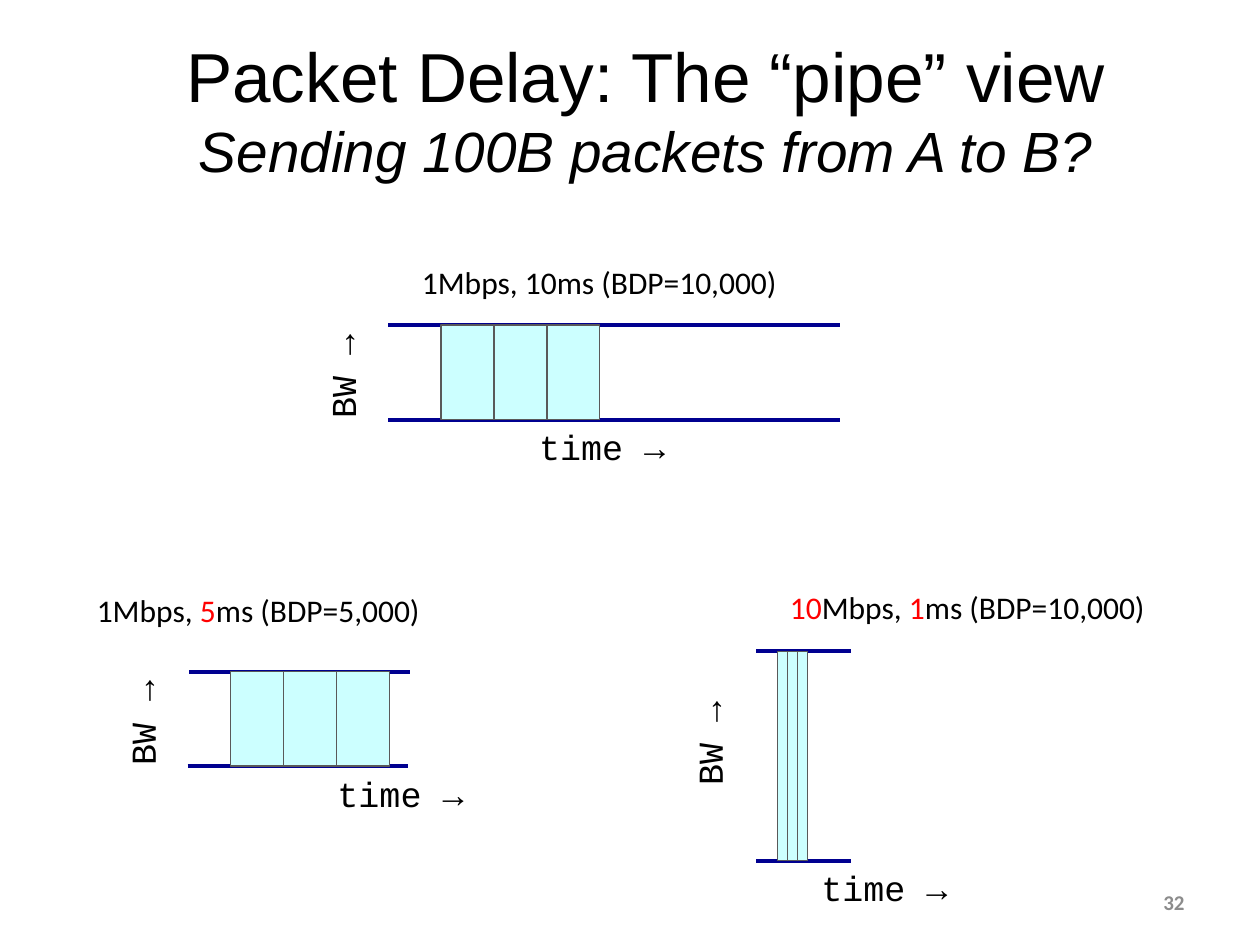
from dataclasses import dataclass

import pptx
import pptx.dml.color
import pptx.enum.shapes
import pptx.enum.text
import pptx.util
from pptx.oxml.xmlchemy import OxmlElement
from pptx.util import Inches

ALIGN = pptx.enum.text.PP_ALIGN
ANCHOR = pptx.enum.text.MSO_ANCHOR


@dataclass(frozen=True)
class Theme:
    black: str = "000000"
    highlight: str = "FF0000"
    rail: str = "000090"
    packet: str = "CCFFFF"
    packet_edge: str = "595959"
    muted: str = "8C8C8C"
    title_font: str = "Arial"
    label_font: str = "Calibri"
    axis_font: str = "Courier New"
    title_size: float = 39.6
    subtitle_size: float = 32.4
    label_size: float = 18
    axis_size: float = 20
    number_size: float = 12


def rgb(value):
    return pptx.dml.color.RGBColor.from_string(value)


class PipeSlide:
    def __init__(self, slide, theme):
        self.slide = slide
        self.theme = theme

    def text(self, left, top, width, height, font, size, color=None, align=ALIGN.LEFT):
        """Add an empty text box and return it with its styled paragraph."""
        box = self.slide.shapes.add_textbox(
            Inches(left), Inches(top), Inches(width), Inches(height))
        box.text_frame.word_wrap = True
        paragraph = box.text_frame.paragraphs[0]
        paragraph.alignment = align
        paragraph.font.name = font
        paragraph.font.size = pptx.util.Pt(size)
        paragraph.font.color.rgb = rgb(color or self.theme.black)
        return box, paragraph

    def fit(self, box):
        box.text_frame.word_wrap = False
        box.text_frame.auto_size = pptx.enum.text.MSO_AUTO_SIZE.SHAPE_TO_FIT_TEXT

    def title(self, heading, subheading):
        theme = self.theme
        box, paragraph = self.text(0.5, 0.22, 9.25, 1.28, theme.title_font,
                                   theme.title_size, align=ALIGN.CENTER)
        box.text_frame.vertical_anchor = ANCHOR.MIDDLE
        paragraph.add_run().text = heading
        paragraph.add_line_break()
        run = paragraph.add_run()
        run.text = subheading
        run.font.size = pptx.util.Pt(theme.subtitle_size)
        run.font.italic = True

    def label(self, left, top, width, parts):
        """Add a caption from (text, highlighted) pairs."""
        box, paragraph = self.text(left, top, width, 0.45,
                                   self.theme.label_font, self.theme.label_size)
        self.fit(box)
        paragraph.line_spacing = 1.2
        for content, highlighted in parts:
            run = paragraph.add_run()
            run.text = content
            if highlighted:
                run.font.color.rgb = rgb(self.theme.highlight)

    def axis(self, content, left, top, width, rotation=0):
        box, paragraph = self.text(left, top, width, 0.44,
                                   self.theme.axis_font, self.theme.axis_size)
        self.fit(box)
        paragraph.add_run().text = content
        box.rotation = rotation

    def rail(self, left, right, y):
        line = self.slide.shapes.add_connector(
            pptx.enum.shapes.MSO_CONNECTOR.STRAIGHT,
            Inches(left), Inches(y), Inches(right), Inches(y))
        line.line.color.rgb = rgb(self.theme.rail)
        line.line.width = pptx.util.Pt(2.25)
        line._element.spPr.append(OxmlElement("a:effectLst"))

    def packet(self, left, top, width, height):
        shape = self.slide.shapes.add_shape(
            pptx.enum.shapes.MSO_SHAPE.RECTANGLE,
            Inches(left), Inches(top), Inches(width), Inches(height))
        shape.shadow.inherit = False
        shape.fill.solid()
        shape.fill.fore_color.rgb = rgb(self.theme.packet)
        shape.line.color.rgb = rgb(self.theme.packet_edge)
        shape.line.width = pptx.util.Pt(0.75)

    def pipe(self, left, right, top, height, first_packet, packet_width,
             time_left, bandwidth_at, bottom_shift=0):
        """Draw two rails, three packets between them and the axis names."""
        bottom = top + height
        self.rail(left, right, top)
        self.rail(left + bottom_shift, right + bottom_shift, bottom)
        for index in range(3):
            self.packet(first_packet + index * packet_width, top, packet_width, height)
        self.axis("time →", time_left, bottom, 1.32)
        self.axis("BW →", *bandwidth_at, 0.98, rotation=270)

    def number(self, content):
        box, paragraph = self.text(7.17, 6.96, 2.33, 0.4, self.theme.label_font,
                                   self.theme.number_size, self.theme.muted, ALIGN.RIGHT)
        box.text_frame.vertical_anchor = ANCHOR.MIDDLE
        paragraph.font.bold = True
        paragraph.add_run().text = content


def main():
    presentation = pptx.Presentation()
    presentation.slide_width = Inches(10)
    presentation.slide_height = Inches(7.5)
    slide = presentation.slides.add_slide(presentation.slide_layouts[6])
    view = PipeSlide(slide, Theme())

    view.title("Packet Delay: The “pipe” view", "Sending 100B packets from A to B?")

    # Reference pipe
    view.label(3.25, 1.98, 3.48, [("1Mbps, 10ms (BDP=10,000)", False)])
    view.pipe(3.08, 6.67, 2.58, 0.75, first_packet=3.5, packet_width=0.42,
              time_left=4.18, bandwidth_at=(2.23, 2.71))

    # Shorter delay
    view.label(0.67, 4.58, 3.2,
               [("1Mbps, ", False), ("5", True), ("ms (BDP=5,000)", False)])
    view.pipe(1.5, 3.25, 5.33, 0.75, first_packet=1.83, packet_width=0.42,
              time_left=2.58, bandwidth_at=(0.64, 5.46), bottom_shift=-0.01)

    # Higher bandwidth
    view.label(6.17, 4.56, 3.48, [("10", True), ("Mbps, ", False),
                                  ("1", True), ("ms (BDP=10,000)", False)])
    view.pipe(6, 6.75, 5.17, 1.66, first_packet=6.17, packet_width=0.08,
              time_left=6.42, bandwidth_at=(5.14, 5.62))

    view.number("32")
    presentation.save("out.pptx")


if __name__ == "__main__":
    main()
